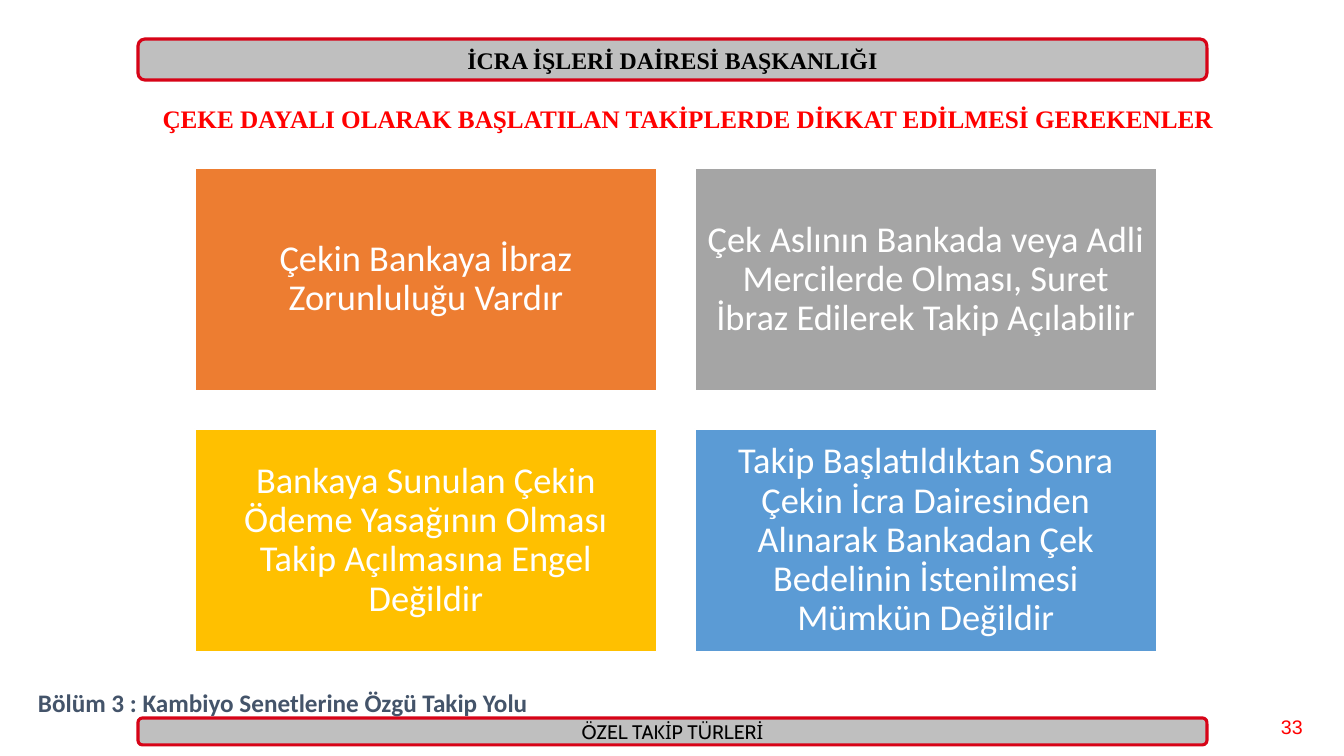
from pptx import Presentation
from pptx.dml.color import RGBColor
from pptx.enum.shapes import MSO_SHAPE
from pptx.enum.text import MSO_ANCHOR, MSO_AUTO_SIZE, PP_ALIGN
from pptx.util import Pt

RECT, ROUND = MSO_SHAPE.RECTANGLE, MSO_SHAPE.ROUNDED_RECTANGLE
TOP, MIDDLE = MSO_ANCHOR.TOP, MSO_ANCHOR.MIDDLE
LEFT, CENTER = PP_ALIGN.LEFT, PP_ALIGN.CENTER
NO_FIT = MSO_AUTO_SIZE.NONE
PX = 914400 / 100.8

THEME = {
    "banner": "BFBFBF", "border": "D70317", "white": "FFFFFF",
    "cards": ["ED7D31", "A5A5A5", "FFC000", "5B9BD5"],
    # font, size, bold, colour
    "header": ("Times New Roman", 17, True, "000000"),
    "footer": ("Cabin", 14, False, "000000"),
    "title": ("Times New Roman", 18, True, "FF0000"),
    "section": ("Calibri", 18, True, "44546A"),
    "number": ("Arial", 14, False, "FF0000"),
    "card": ("Calibri", 26, False, "FFFFFF"),
}


def px(*lengths):
    return [round(n * PX) for n in lengths]


def write(sp, text, style, align=LEFT, anchor=TOP):
    tf = sp.text_frame
    tf.word_wrap = True
    tf.auto_size = NO_FIT
    tf.vertical_anchor = anchor
    p = tf.paragraphs[0]
    p.text = text
    p.alignment = align
    name, size, bold, color = THEME[style]
    p.font.name, p.font.size, p.font.bold = name, Pt(size), bold
    p.font.color.rgb = RGBColor.from_string(color)
    return p


prs = Presentation()
prs.slide_width, prs.slide_height = px(1344, 756)
slide = prs.slides.add_slide(prs.slide_layouts[5])
shapes = slide.shapes

# Title
title = shapes.title
title.left, title.top, title.width, title.height = px(147, 98, 1082, 40)
p = write(title, "ÇEKE DAYALI OLARAK BAŞLATILAN TAKİPLERDE DİKKAT EDİLMESİ GEREKENLER",
          "title", CENTER)
p.line_spacing = 1.0
p.space_before = Pt(0)

# Header and footer banners
banners = [
    (39, 41, "İCRA İŞLERİ DAİRESİ BAŞKANLIĞI", "header"),
    (718, 27, "ÖZEL TAKİP TÜRLERİ", "footer"),
]
for top, height, text, style in banners:
    sp = shapes.add_shape(ROUND, *px(138, top, 1069, height))
    sp.shadow.inherit = False
    sp.fill.solid()
    sp.fill.fore_color.rgb = RGBColor.from_string(THEME["banner"])
    sp.line.color.rgb = RGBColor.from_string(THEME["border"])
    sp.line.width = Pt(2.25)
    write(sp, text, style, CENTER, MIDDLE)

# Section label and page number
labels = [
    ((28, 682, 520, 40), "Bölüm 3 : Kambiyo Senetlerine Özgü Takip Yolu", "section"),
    ((1271, 710, 45, 27), "33", "number"),
]
for box, text, style in labels:
    write(shapes.add_textbox(*px(*box)), text, style)

# Two by two grid of rules on cheques
rules = [
    "Çekin Bankaya İbraz Zorunluluğu Vardır",
    "Çek Aslının Bankada veya Adli Mercilerde Olması, Suret İbraz Edilerek Takip Açılabilir",
    "Bankaya Sunulan Çekin Ödeme Yasağının Olması Takip Açılmasına Engel Değildir",
    "Takip Başlatıldıktan Sonra Çekin İcra Dairesinden Alınarak Bankadan Çek "
    "Bedelinin İstenilmesi Mümkün Değildir",
]
for i, (text, color) in enumerate(zip(rules, THEME["cards"])):
    row, col = divmod(i, 2)
    sp = shapes.add_shape(RECT, *px(195 + 500 * col, 168 + 261 * row, 462, 223))
    sp.shadow.inherit = False
    sp.fill.solid()
    sp.fill.fore_color.rgb = RGBColor.from_string(color)
    sp.line.color.rgb = RGBColor.from_string(THEME["white"])
    sp.line.width = Pt(1)
    tf = sp.text_frame
    tf.margin_left, tf.margin_top, tf.margin_right, tf.margin_bottom = px(11, 11, 11, 11)
    write(sp, text, "card", CENTER, MIDDLE).line_spacing = 0.9

prs.save("out.pptx")
